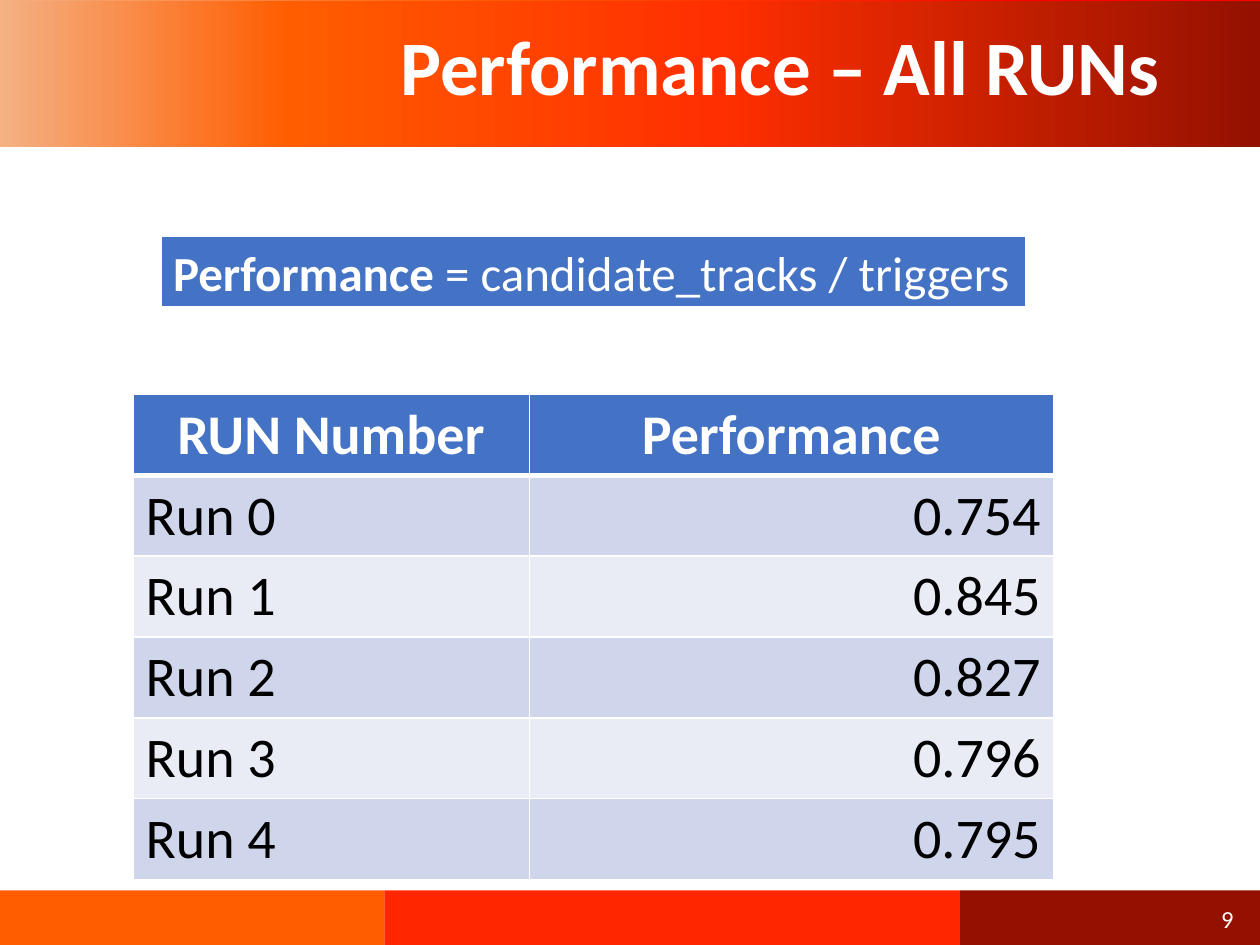
from lxml.etree import SubElement
from pptx import Presentation
from pptx.dml.color import RGBColor
from pptx.enum.shapes import MSO_SHAPE
from pptx.enum.text import MSO_ANCHOR, PP_ALIGN
from pptx.oxml.ns import qn
from pptx.util import Pt

COLORS = {
    "white": "FFFFFF", "black": "000000", "blue": "4472C4",
    "odd_row": "CFD5EA", "even_row": "E9EBF5", "peach": "F4B183",
    "orange": "FF5D00", "red": "FF0000", "vermilion": "FF2F00",
    "scarlet": "FF2600", "maroon": "941100",
}
RUNS = [("Run 0", "0.754"), ("Run 1", "0.845"), ("Run 2", "0.827"),
        ("Run 3", "0.796"), ("Run 4", "0.795")]


def color(name):
    """Return the named colour."""
    return RGBColor.from_string(COLORS[name])


def write(text_frame, *parts, size, ink="white", align=PP_ALIGN.LEFT, spacing=None):
    """Write (text, bold) parts as one paragraph."""
    paragraph = text_frame.paragraphs[0]
    paragraph.alignment = align
    if spacing:
        paragraph.line_spacing = spacing
    for text, bold in parts:
        run = paragraph.add_run()
        run.text = text
        run.font.name = "Calibri"
        run.font.size = Pt(size)
        run.font.bold = bold
        run.font.color.rgb = color(ink)


def add_box(slide, left, top, width, height, fill=None):
    """Add a borderless rectangle, solid if a fill is named."""
    shape = slide.shapes.add_shape(
        MSO_SHAPE.RECTANGLE, Pt(left), Pt(top), Pt(width), Pt(height))
    shape.shadow.inherit = False
    shape.line.fill.background()
    if fill:
        shape.fill.solid()
        shape.fill.fore_color.rgb = color(fill)
    return shape


def add_gradient_band(slide, left, top, width, height, stops, angle):
    """Add a rectangle with a gradient of (percent, colour) stops."""
    shape = add_box(slide, left, top, width, height)
    shape.fill.gradient()
    shape.fill.gradient_angle = angle
    stop_list = shape.fill._fill._gradFill.find(qn("a:gsLst"))
    for stop in list(stop_list):
        stop_list.remove(stop)
    for percent, name in stops:
        stop = SubElement(stop_list, qn("a:gs"), pos=str(percent * 1000))
        SubElement(stop, qn("a:srgbClr"), val=COLORS[name])


def add_text_box(slide, left, top, width, height):
    """Add a wrapping, vertically centred text box and return its frame."""
    box = slide.shapes.add_textbox(Pt(left), Pt(top), Pt(width), Pt(height))
    box.text_frame.word_wrap = True
    box.text_frame.vertical_anchor = MSO_ANCHOR.MIDDLE
    return box.text_frame


def add_header(slide, left, top, width, height):
    """Add the gradient bands and the title."""
    add_gradient_band(slide, left, top - 1, width, height,
                      [(0, "peach"), (35, "orange"), (74, "red")], 315)
    add_gradient_band(slide, left, top + 0.5, width, height,
                      [(0, "peach"), (23, "orange"), (57, "vermilion"), (100, "maroon")], 0)
    frame = add_text_box(slide, left + 50, top + 0.5, width - 100, height - 3.5)
    write(frame, ("Performance – All RUNs", True), size=44,
          align=PP_ALIGN.RIGHT, spacing=0.9)


def add_footer(slide, left, top, width, height):
    """Add the three footer bars and the page number."""
    edges = [0, 219.6, 548.6, width]
    for start, end, fill in zip(edges, edges[1:], ["orange", "scarlet", "maroon"]):
        add_box(slide, left + start, top, end - start, height, fill)
    frame = add_text_box(slide, left + 550, top + 1.5, 162, height - 3)
    write(frame, ("9", False), size=14, align=PP_ALIGN.RIGHT)


def add_formula(slide, left, top, width, height):
    """Add the box that defines performance."""
    shape = add_box(slide, left, top, width, height, "blue")
    shape.line.color.rgb = color("white")
    shape.line.width = Pt(1.5)
    shape.text_frame.word_wrap = False
    shape.text_frame.vertical_anchor = MSO_ANCHOR.TOP
    write(shape.text_frame, ("Performance", True),
          (" = candidate_tracks / triggers", False), size=28)


def add_borders(cell, top, bottom):
    """Give a cell white borders, with the given top and bottom widths."""
    properties = cell._tc.get_or_add_tcPr()
    for side, width in zip("LRTB", (1, 1, top, bottom)):
        line = SubElement(properties, qn(f"a:ln{side}"), w=str(Pt(width)))
        fill = SubElement(line, qn("a:solidFill"))
        SubElement(fill, qn("a:srgbClr"), val=COLORS["white"])


def add_run_table(slide, left, top, column_widths, row_height):
    """Add the table of performance by run."""
    rows = [("RUN Number", "Performance"), *RUNS]
    table = slide.shapes.add_table(
        len(rows), len(column_widths), Pt(left), Pt(top),
        Pt(sum(column_widths)), Pt(row_height * len(rows))).table
    for column, width in zip(table.columns, column_widths):
        column.width = Pt(width)
    for row_index, values in enumerate(rows):
        header = row_index == 0
        fill = "blue" if header else "odd_row" if row_index % 2 else "even_row"
        for column_index, value in enumerate(values):
            cell = table.cell(row_index, column_index)
            add_borders(cell, top=3 if row_index == 1 else 1, bottom=3 if header else 1)
            cell.fill.solid()
            cell.fill.fore_color.rgb = color(fill)
            body_align = PP_ALIGN.RIGHT if column_index else PP_ALIGN.LEFT
            write(cell.text_frame, (value, header), size=32,
                  ink="white" if header else "black",
                  align=PP_ALIGN.CENTER if header else body_align)


def main():
    """Build and save the slide."""
    presentation = Presentation()
    presentation.slide_width = Pt(720)
    presentation.slide_height = Pt(540)
    slide = presentation.slides.add_slide(presentation.slide_layouts[6])
    add_header(slide, 0, 0, 720, 83.5)
    add_footer(slide, 0, 508.8, 720, 32)
    add_run_table(slide, 76, 225.5, [226.5, 299.5], 46.2)
    add_formula(slide, 91.8, 134.8, 494.6, 41)
    presentation.save("out.pptx")


if __name__ == "__main__":
    main()
